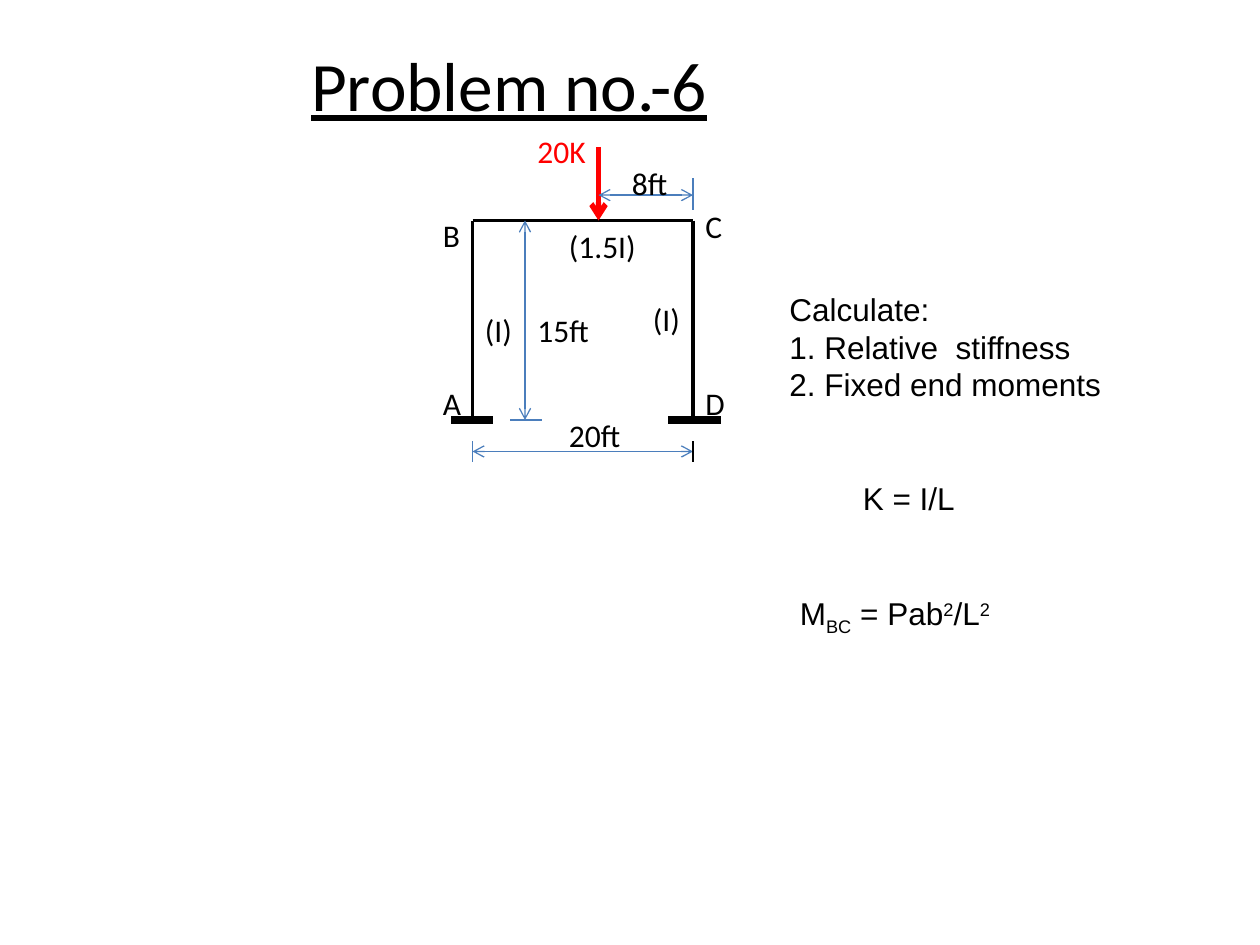
from dataclasses import dataclass

from lxml.etree import SubElement
from pptx import Presentation
from pptx.dml.color import RGBColor
from pptx.enum.shapes import MSO_CONNECTOR
from pptx.enum.text import MSO_ANCHOR, PP_ALIGN
from pptx.oxml.ns import qn
from pptx.util import Pt


@dataclass(frozen=True)
class Theme:
    ink: str = "000000"
    load: str = "FF0000"
    dim: str = "4B7EBC"
    label_font: str = "Calibri"
    note_font: str = "Arial"
    title_size: float = 39.6
    body_size: float = 18
    thin: float = 0.75
    member: float = 2.25
    load_line: float = 3
    support: float = 4.5


class SlideBuilder:
    def __init__(self, prs, theme):
        self.theme = theme
        self.s = prs.slides.add_slide(prs.slide_layouts[5])

    def run(self, p, text, font, size, color, baseline=0):
        r = p.add_run()
        r.text = text
        r.font.name = font
        r.font.size = Pt(size)
        r.font.color.rgb = RGBColor.from_string(color)
        if baseline:
            r.font._element.set("baseline", str(baseline * 1000))
        return r

    def title(self, text, x, y, w, h):
        sp = self.s.shapes.title
        sp.left, sp.top, sp.width, sp.height = Pt(x), Pt(y), Pt(w), Pt(h)
        tf = sp.text_frame
        tf.vertical_anchor = MSO_ANCHOR.TOP
        tf.margin_top = Pt(6)
        tf.margin_bottom = 0
        p = tf.paragraphs[0]
        p.alignment = PP_ALIGN.CENTER
        t = self.theme
        self.run(p, text, t.label_font, t.title_size, t.ink).font.underline = True

    def text(self, paragraphs, x, y, w, h, font, color=None):
        """Each paragraph is a list of (text, baseline percent) runs."""
        tf = self.s.shapes.add_textbox(Pt(x), Pt(y), Pt(w), Pt(h)).text_frame
        tf.word_wrap = True
        for i, runs in enumerate(paragraphs):
            p = tf.add_paragraph() if i else tf.paragraphs[0]
            for text, baseline in runs:
                self.run(p, text, font, self.theme.body_size,
                         color or self.theme.ink, baseline)

    def label(self, text, x, y, w, color=None):
        self.text([[(text, 0)]], x, y, w, 29, self.theme.label_font, color)

    def note(self, paragraphs, x, y, w, h=29):
        self.text(paragraphs, x, y, w, h, self.theme.note_font)

    def line(self, x1, y1, x2, y2, color, width, arrows=()):
        c = self.s.shapes.add_connector(
            MSO_CONNECTOR.STRAIGHT, Pt(x1), Pt(y1), Pt(x2), Pt(y2))
        c.line.color.rgb = RGBColor.from_string(color)
        c.line.width = Pt(width)
        for end in arrows:
            SubElement(c.line._get_or_add_ln(), qn(f"a:{end}"), type="arrow")
        SubElement(c._element.spPr, qn("a:effectLst"))

    def dimension(self, x1, y1, x2, y2):
        self.line(x1, y1, x2, y2, self.theme.dim, self.theme.thin,
                  ("headEnd", "tailEnd"))


def main():
    prs = Presentation()
    prs.slide_width, prs.slide_height = Pt(720), Pt(540)
    t = Theme()
    b = SlideBuilder(prs, t)
    b.title("Problem no.-6", 132, 18, 318, 48)

    # Portal frame A-B-C-D with fixed supports
    left, right, top, base = 270, 396, 126, 240
    load_x = 342
    for ends in ((left, top, left, base), (left, top, right, top),
                 (right, top, right, base)):
        b.line(*ends, t.ink, t.member)
    for x1, x2 in ((258, 282), (382, 412)):
        b.line(x1, base, x2, base, t.ink, t.support)

    # Point load
    b.line(load_x, 84, load_x, top, t.load, t.load_line, ("tailEnd",))
    b.label("20K", 300, 72, 54, t.load)

    # Dimension lines and their end ticks
    b.dimension(300, top, 300, base)
    b.dimension(left, 258, right, 258)
    b.dimension(load_x, 111.5, right, 111.5)
    for x1, y1, x2, y2, color in (
            (291.5, base, 309.5, base, t.dim),
            (left, 252, left, 264, t.dim),
            (right, 252, right, 264, t.ink),
            (right, 120, right, 102, t.dim)):
        b.line(x1, y1, x2, y2, color, t.thin)

    # Joint, stiffness and length labels
    for text, x, y, w in (
            ("A", 246, 216, 24), ("B", 246, 120, 24),
            ("C", right, 115, 24), ("D", right, 216, 24),
            ("(1.5I)", 318, top, 60), ("(I)", left, 174, 36),
            ("(I)", 366, 168, 30), ("15ft", 300, 174, 48),
            ("20ft", 318, 234, 48), ("8ft", 354, 90, 42)):
        b.label(text, x, y, w)

    # Task and formulas
    tasks = ("Calculate:", "1. Relative  stiffness", "2. Fixed end moments")
    b.note([[(task, 0)] for task in tasks], 444, 162, 240, 73)
    b.note([[("K = I/L", 0)]], 486, 270, 96)
    b.note([[("M", 0), ("BC", -25), (" = Pab", 0), ("2", 30),
             ("/L", 0), ("2", 30)]], 450, 336, 174)

    prs.save("out.pptx")


if __name__ == "__main__":
    main()
